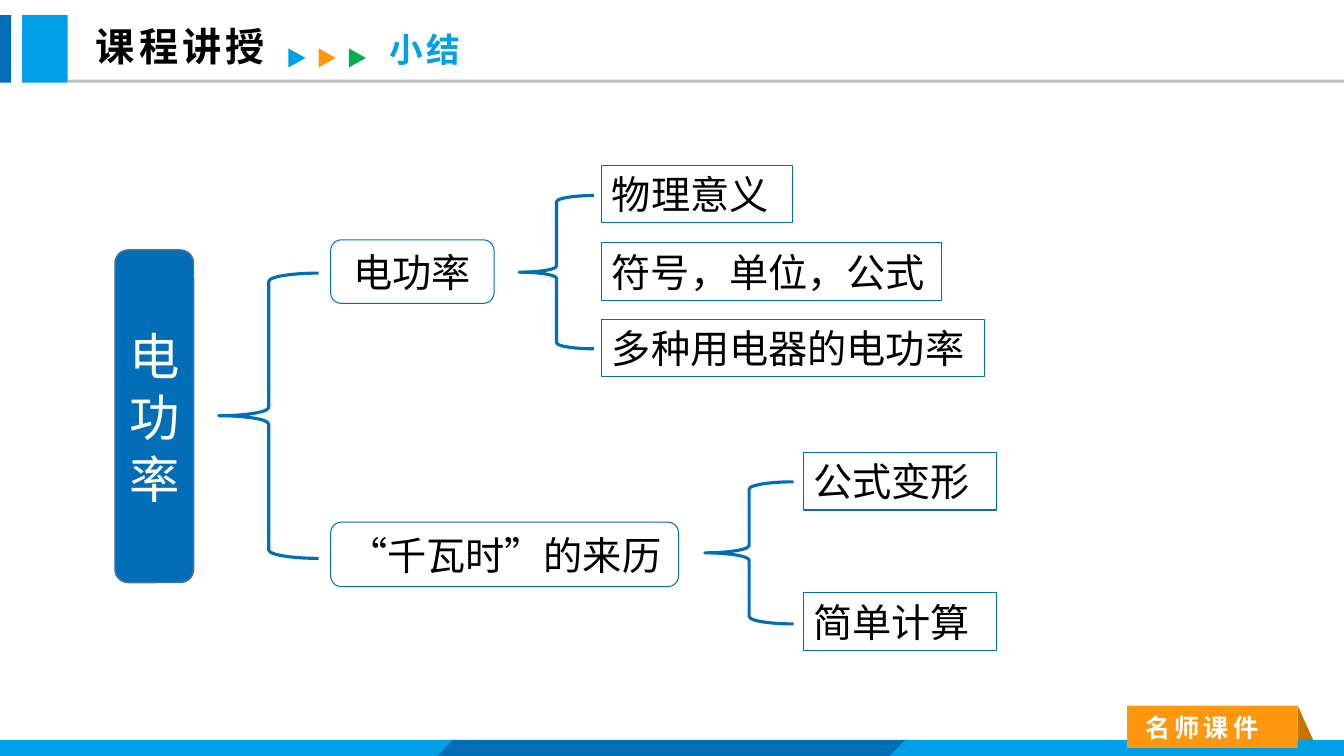
"""Build the summary slide on electric power as a bracketed tree."""
from dataclasses import dataclass

from lxml.etree import SubElement
from pptx import Presentation
from pptx.dml.color import RGBColor
from pptx.enum.shapes import MSO_SHAPE
from pptx.enum.text import MSO_ANCHOR, MSO_AUTO_SIZE, PP_ALIGN
from pptx.oxml.ns import qn
from pptx.util import Inches, Pt


@dataclass(frozen=True)
class Theme:
    blue: str = "036EB8"
    sky: str = "00A0E9"
    orange: str = "FE970E"
    fold: str = "C77201"
    green: str = "00B050"
    grey: str = "BFBFBF"
    edge: str = "43739E"
    black: str = "000000"
    white: str = "FFFFFF"
    sans: str = "Noto Sans CJK SC"
    serif: str = "Times New Roman"
    root_size: int = 36
    body_size: int = 28
    section_size: int = 24
    badge_size: int = 18
    spacing: int = 3


THEME = Theme()
WIDTH, HEIGHT = 13.33, 7.5
TITLE = ("课程讲授", (0.85, 0.17, 1.92, 0.57))
SECTION = ("小结", (3.76, 0.24, 0.95, 0.5))
BADGE = ("名师课件", (11.26, 7.02, 1.38, 0.4))
BLOCKS = [
    ((0.67, 0.79, 12.66, 0.03), THEME.grey),
    ((0.22, 0.15, 0.45, 0.67), THEME.sky),
    ((0, 0.15, 0.11, 0.67), THEME.blue),
    ((11.18, 7, 1.69, 0.42), THEME.orange),
]
BAND_TOP = 7.34
OUTLINES = [
    ([(12.87, 7), (13.06, 7.42), (12.87, 7.42)], THEME.fold),
    ([(0, BAND_TOP), (4.51, BAND_TOP), (4.35, HEIGHT), (0, HEIGHT)], THEME.sky),
    ([(4.49, BAND_TOP), (9, BAND_TOP), (8.85, HEIGHT), (4.34, HEIGHT)], THEME.blue),
    ([(8.98, BAND_TOP), (WIDTH, BAND_TOP), (WIDTH, HEIGHT), (8.82, HEIGHT)], THEME.sky),
]
ARROW_COLORS = [THEME.sky, THEME.orange, THEME.green]
ARROW_LEFT, ARROW_STEP = 2.85, 0.3
ROOT = ("电功率", (1.14, 2.48, 0.78, 3.3))
BRANCHES = [
    ("电功率", (3.28, 2.38, 1.62, 0.63)),
    ("“千瓦时”的来历", (3.28, 5.18, 3.45, 0.64)),
]
LEAF_HEIGHT = 0.57
LEAVES = [
    ("物理意义", 5.97, 1.64, 1.89, THEME.sans),
    ("符号，单位，公式", 5.97, 2.41, 3.37, THEME.sans),
    ("多种用电器的电功率", 5.97, 3.17, 3.79, THEME.sans),
    ("公式变形", 7.97, 4.49, 1.91, THEME.serif),
    ("简单计算", 7.97, 5.88, 1.91, THEME.sans),
]
BRACES = [(2.17, 2.71, 0.99, 2.83), (5.15, 1.94, 0.74, 1.52), (6.99, 4.78, 0.88, 1.41)]


def paint(shape, fill=None, line=None, weight=0.75):
    shape.shadow.inherit = False
    if fill:
        shape.fill.solid()
        shape.fill.fore_color.rgb = RGBColor.from_string(fill)
    else:
        shape.fill.background()
    if line:
        shape.line.color.rgb = RGBColor.from_string(line)
        shape.line.width = Pt(weight)
    else:
        shape.line.fill.background()


def add_block(slide, kind, box, **style):
    shape = slide.shapes.add_shape(kind, *map(Inches, box))
    paint(shape, **style)
    return shape


def add_outline(slide, points, color):
    builder = slide.shapes.build_freeform(
        Inches(points[0][0]), Inches(points[0][1]))
    builder.add_line_segments([(Inches(x), Inches(y)) for x, y in points[1:]])
    paint(builder.convert_to_shape(), fill=color)


def write(shape, text, size, color=THEME.black, font=THEME.sans,
          align=PP_ALIGN.LEFT, wrap=True):
    frame = shape.text_frame
    frame.text = text
    frame.word_wrap = wrap
    frame.auto_size = MSO_AUTO_SIZE.NONE
    frame.vertical_anchor = MSO_ANCHOR.MIDDLE
    paragraph = frame.paragraphs[0]
    paragraph.alignment = align
    run = paragraph.runs[0]
    run.font.size = Pt(size)
    run.font.name = font
    run.font.color.rgb = RGBColor.from_string(color)
    properties = run.font._element
    properties.set("lang", "zh-CN")
    SubElement(properties, qn("a:ea")).set("typeface", THEME.sans)
    return paragraph


def write_heading(shape, text, size, color):
    paragraph = write(shape, text, size, color, wrap=False)
    font = paragraph.runs[0].font
    font.bold = True
    font._element.set("spc", str(THEME.spacing * 100))


def add_heading(slide, heading, size, color):
    text, box = heading
    write_heading(slide.shapes.add_textbox(*map(Inches, box)), text, size, color)


def add_frame(slide):
    for points, color in OUTLINES:
        add_outline(slide, points, color)
    for box, color in BLOCKS:
        add_block(slide, MSO_SHAPE.RECTANGLE, box, fill=color)
    for index, color in enumerate(ARROW_COLORS):
        box = (ARROW_LEFT + index * ARROW_STEP, 0.49, 0.19, 0.17)
        add_block(slide, MSO_SHAPE.ISOSCELES_TRIANGLE, box, fill=color).rotation = 90
    title = slide.shapes.title
    text, box = TITLE
    title.left, title.top, title.width, title.height = map(Inches, box)
    write_heading(title, text, THEME.body_size, THEME.black)
    add_heading(slide, SECTION, THEME.section_size, THEME.sky)
    add_heading(slide, BADGE, THEME.badge_size, THEME.white)


def add_tree(slide):
    text, box = ROOT
    root = add_block(slide, MSO_SHAPE.ROUNDED_RECTANGLE, box,
                     fill=THEME.blue, line=THEME.edge, weight=1)
    paragraph = write(root, text, THEME.root_size, THEME.white, THEME.serif,
                      PP_ALIGN.CENTER)
    paragraph.line_spacing = Pt(44)
    for text, box in BRANCHES:
        branch = add_block(slide, MSO_SHAPE.ROUNDED_RECTANGLE, box, line=THEME.blue)
        write(branch, text, THEME.body_size, align=PP_ALIGN.CENTER)
    for text, left, top, width, font in LEAVES:
        leaf = add_block(slide, MSO_SHAPE.RECTANGLE,
                         (left, top, width, LEAF_HEIGHT), line=THEME.blue)
        write(leaf, text, THEME.body_size, font=font)
    for box in BRACES:
        add_block(slide, MSO_SHAPE.LEFT_BRACE, box, line=THEME.blue, weight=2.25)


def main():
    presentation = Presentation()
    presentation.slide_width = Inches(WIDTH)
    presentation.slide_height = Inches(HEIGHT)
    slide = presentation.slides.add_slide(presentation.slide_layouts[5])
    add_frame(slide)
    add_tree(slide)
    presentation.save("out.pptx")


if __name__ == "__main__":
    main()
